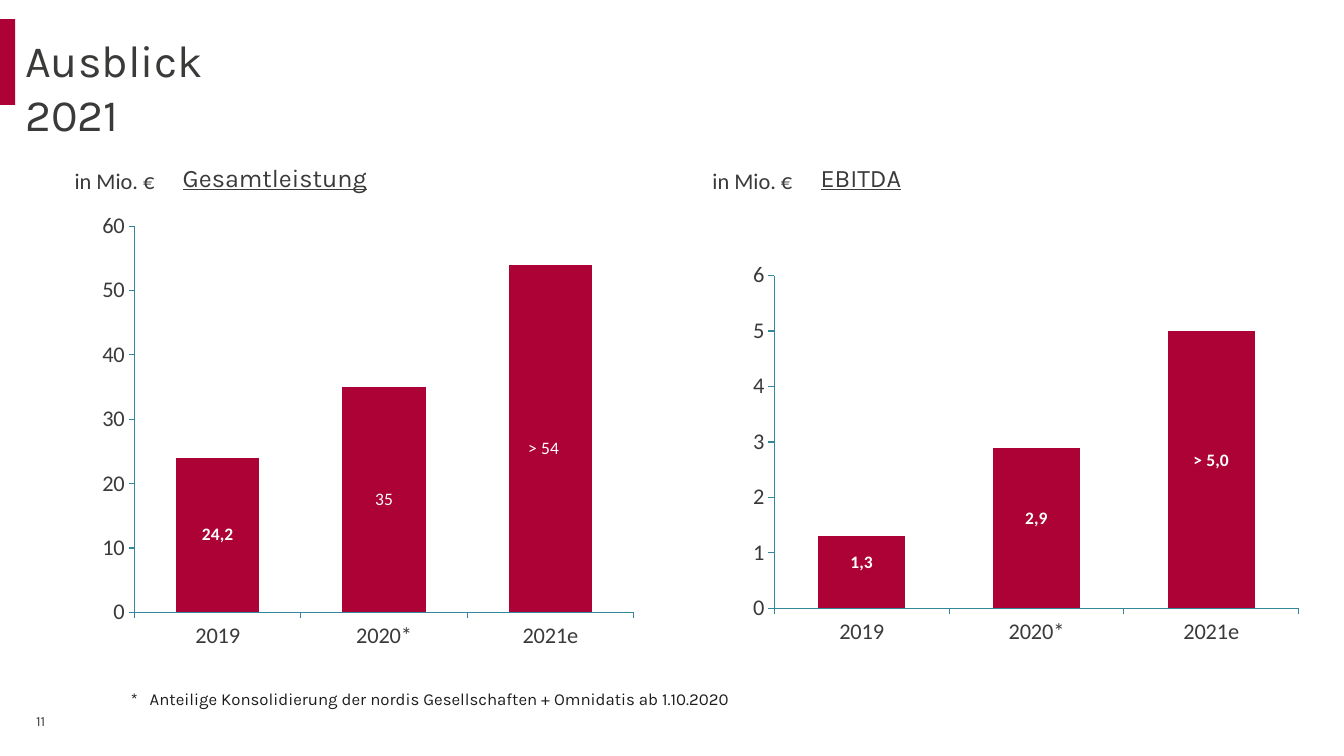
from dataclasses import dataclass

from lxml import etree
from pptx import Presentation
from pptx.chart.data import CategoryChartData
from pptx.dml.color import RGBColor
from pptx.enum.chart import XL_CHART_TYPE, XL_LABEL_POSITION, XL_TICK_MARK
from pptx.enum.shapes import MSO_SHAPE
from pptx.enum.text import MSO_ANCHOR, MSO_AUTO_SIZE, PP_ALIGN
from pptx.oxml.ns import qn
from pptx.util import Pt

STACKED = XL_CHART_TYPE.COLUMN_STACKED
CENTER = XL_LABEL_POSITION.CENTER
TICK_OUT, TICK_NONE = XL_TICK_MARK.OUTSIDE, XL_TICK_MARK.NONE
RECTANGLE = MSO_SHAPE.RECTANGLE
TOP, MIDDLE = MSO_ANCHOR.TOP, MSO_ANCHOR.MIDDLE
NO_FIT = MSO_AUTO_SIZE.NONE
LEFT = PP_ALIGN.LEFT
TITLE_ONLY = 5


@dataclass(frozen=True)
class Theme:
    red: RGBColor = RGBColor(0xAC, 0x02, 0x36)
    grey: RGBColor = RGBColor(0x3A, 0x3A, 0x39)
    black: RGBColor = RGBColor(0x1D, 0x1D, 0x1C)
    white: RGBColor = RGBColor(0xFF, 0xFF, 0xFF)
    teal: RGBColor = RGBColor(0x34, 0x86, 0x99)
    heading_font: str = "Karla"
    chart_font: str = "Calibri"
    title: int = 32
    heading: int = 18
    axis: int = 16
    label: float = 12.5
    note: int = 12
    number: int = 10


THEME = Theme()
CATEGORIES = ("2019", "2020*", "2021e")

# Labels: text, bold, horizontal and vertical shift as a share of the chart
PANELS = (
    dict(heading="Gesamtleistung", left=46.2, heading_width=193,
         frame=(7, 112.3, 481.7, 355), plot=(0.185, 0.139, 0.74, 0.777),
         values=(24, 35, 54), top=60, step=10,
         labels=(("24,2", True, 0, 0), ("35", False, 0, 0),
                 ("> 54", False, -0.01, 0.02))),
    dict(heading="EBITDA", left=501.8, heading_width=90,
         frame=(459.4, 154.4, 506.2, 334.1), plot=(0.185, 0.127, 0.74, 0.712),
         values=(1.3, 2.9, 5), top=6, step=1,
         labels=(("1,3", True, 0, -0.02), ("2,9", True, 0, -0.02),
                 ("> 5,0", True, 0, -0.02))),
)


def style_font(font, size, color, name, bold=False):
    font.size, font.name, font.bold = Pt(size), name, bold
    font.color.rgb = color


def write(box, text, size, color=THEME.grey, name=THEME.heading_font,
          anchor=TOP, underline=False):
    frame = box.text_frame
    frame.word_wrap, frame.auto_size = True, NO_FIT
    frame.vertical_anchor = anchor
    para = frame.paragraphs[0]
    para.alignment = LEFT
    span = para.add_run()
    span.text = text
    style_font(span.font, size, color, name)
    if underline:
        span.font.underline = True
    return para


def add_text(page, frame, text, size, **style):
    box = page.shapes.add_textbox(*map(Pt, frame))
    return write(box, text, size, **style)


def add_layout(**settings):
    layout = etree.Element(qn("c:layout"))
    manual = etree.SubElement(layout, qn("c:manualLayout"))
    for tag, value in settings.items():
        etree.SubElement(manual, qn(f"c:{tag}")).set("val", str(value))
    return layout


def place_plot(chart, plot):
    area = chart.element.find(f".//{qn('c:plotArea')}")
    for old in area.findall(qn("c:layout")):
        area.remove(old)
    x, y, w, h = plot
    area.insert(0, add_layout(layoutTarget="inner", xMode="edge",
                              yMode="edge", x=x, y=y, w=w, h=h))


def style_axis(axis):
    axis.has_major_gridlines = False
    axis.major_tick_mark, axis.minor_tick_mark = TICK_OUT, TICK_NONE
    axis.format.line.color.rgb = THEME.teal
    axis.format.line.width = Pt(0.75)
    style_font(axis.tick_labels.font, THEME.axis, THEME.grey, THEME.chart_font)


def add_bar_labels(series, labels):
    for index, (text, bold, _, _) in enumerate(labels):
        label = series.points[index].data_label
        span = label.text_frame.paragraphs[0].add_run()
        span.text = text
        style_font(span.font, THEME.label, THEME.white, THEME.chart_font, bold)
        label.position = CENTER
    # Shift labels away from the bar centre
    elements = series.points[0].data_label._ser.findall(f".//{qn('c:dLbl')}")
    for element, (_, _, x, y) in zip(elements, labels):
        if x or y:
            element.find(qn("c:idx")).addnext(add_layout(x=x, y=y))


def add_column_chart(page, panel):
    data = CategoryChartData(number_format="General")
    data.categories = CATEGORIES
    data.add_series(panel["heading"], panel["values"])
    chart = page.shapes.add_chart(
        STACKED, *map(Pt, panel["frame"]), data).chart
    chart.has_legend = chart.has_title = False
    style_font(chart.font, THEME.axis, THEME.white, THEME.chart_font)
    place_plot(chart, panel["plot"])

    style_axis(chart.category_axis)
    scale = chart.value_axis
    style_axis(scale)
    scale.minimum_scale, scale.maximum_scale = 0, panel["top"]
    scale.major_unit = panel["step"]

    columns = chart.plots[0]
    columns.gap_width, columns.overlap = 100, 100
    columns.vary_by_categories = False
    series = columns.series[0]
    series.format.fill.solid()
    series.format.fill.fore_color.rgb = THEME.red
    add_bar_labels(series, panel["labels"])


def add_panel(page, panel):
    left = panel["left"]
    add_column_chart(page, panel)
    add_text(page, (left, 115.5, 76, 27), "in Mio. €", THEME.axis,
             name=THEME.chart_font)
    add_text(page, (left + 77.2, 112.3, panel["heading_width"], 29),
             panel["heading"], THEME.heading, underline=True)


def add_title(page, text):
    title = page.shapes.title
    title.left, title.top, title.width, title.height = map(
        Pt, (10.8, 19.8, 200, 46))
    write(title, text, THEME.title)


def add_accent(page):
    accent = page.shapes.add_shape(RECTANGLE, *map(Pt, (0, 13.7, 10.8, 61.2)))
    accent.shadow.inherit = False
    accent.fill.solid()
    accent.fill.fore_color.rgb = THEME.red
    accent.line.fill.background()


def add_footnote(page, text):
    para = add_text(page, (86.4, 488.5, 631, 22), f"*\t{text}", THEME.note,
                    color=THEME.black)
    # Hanging indent behind the asterisk
    properties = para._p.get_or_add_pPr()
    properties.set("marL", str(Pt(13.5)))
    properties.set("indent", str(-Pt(13.5)))


def main():
    deck = Presentation()
    deck.slide_width, deck.slide_height = Pt(960), Pt(540)
    page = deck.slides.add_slide(deck.slide_layouts[TITLE_ONLY])

    # Title area
    add_accent(page)
    add_title(page, "Ausblick 2021")

    # Charts with headings
    for panel in PANELS:
        add_panel(page, panel)

    # Footnote and page number
    add_footnote(page, "Anteilige Konsolidierung der nordis Gesellschaften"
                       " + Omnidatis ab 1.10.2020")
    add_text(page, (18.7, 500.4, 216, 29), "11", THEME.number, anchor=MIDDLE)

    deck.save("out.pptx")


if __name__ == "__main__":
    main()
